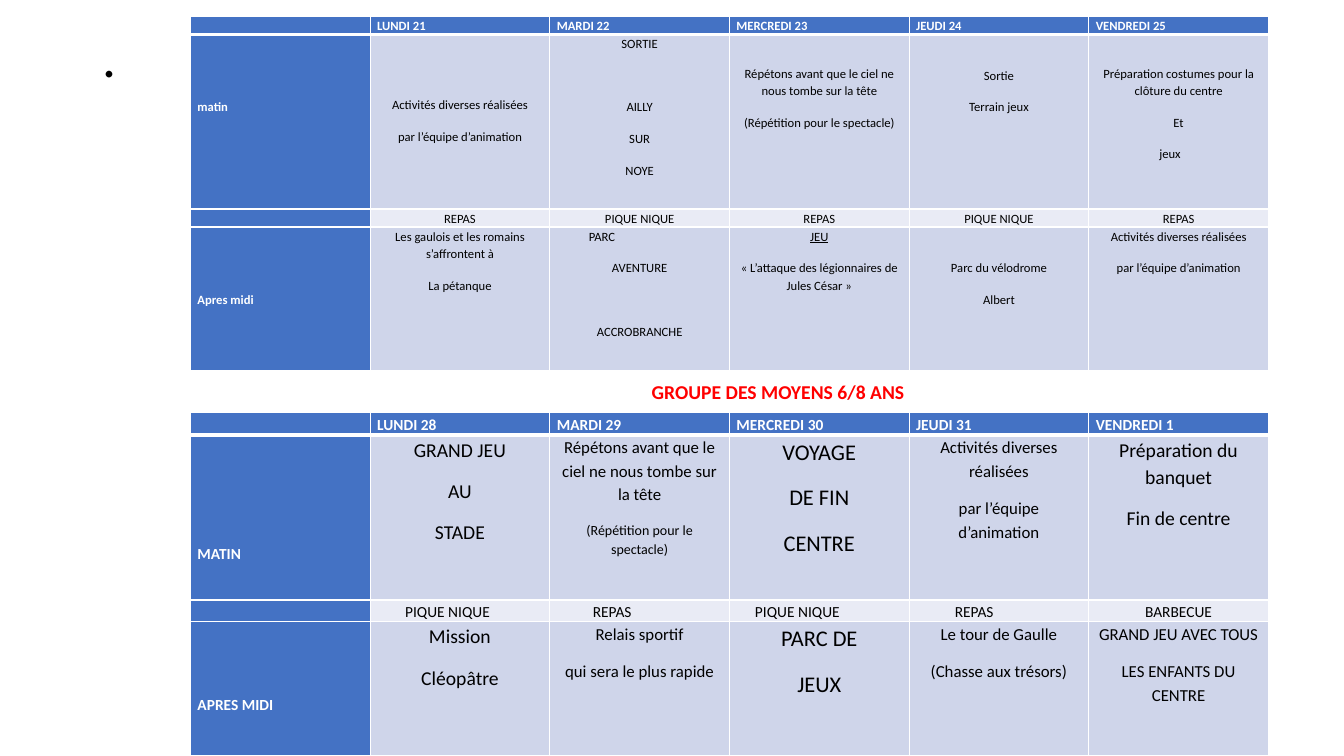
from dataclasses import dataclass

import pptx
import pptx.dml.color
import pptx.enum.text
import pptx.oxml
import pptx.oxml.ns
import pptx.util

FONT = "Calibri"
BLUE, LILAC, PALE = "4472C4", "CFD5EA", "E9EBF5"
WHITE, BLACK, RED = "FFFFFF", "000000", "FF0000"
LINE_SPACING, SPACE_AFTER = 1.15, 10
LEFT, COLUMN_WIDTH = 14.17, 13.37
CENTER = pptx.enum.text.PP_ALIGN.CENTER
MIDDLE = pptx.enum.text.MSO_ANCHOR.MIDDLE

deck = pptx.Presentation()
deck.slide_width = pptx.util.Inches(13.33)
deck.slide_height = pptx.util.Inches(7.5)


@dataclass(frozen=True)
class Line:
    """One paragraph; skip counts line steps left open above, indent is a percentage of the width."""
    text: str
    skip: float = 0
    indent: float = 0
    size: int = 0
    underline: bool = False


@dataclass(frozen=True)
class Entry:
    lines: tuple[Line, ...]
    size: int = 0


@dataclass(frozen=True)
class Week:
    top: float
    size: int
    row_heights: tuple[float, ...]
    rows: tuple[tuple[Entry, ...], ...]


def entry(*lines: str | Line, size: int = 0) -> Entry:
    return Entry(tuple(Line(line) if isinstance(line, str) else line for line in lines), size)


def entries(*texts: str) -> tuple[Entry, ...]:
    return tuple(entry(text) for text in texts)


def across(percent: float) -> int:
    return round(deck.slide_width * percent / 100)


def down(percent: float) -> int:
    return round(deck.slide_height * percent / 100)


def color(value: str) -> pptx.dml.color.RGBColor:
    return pptx.dml.color.RGBColor.from_string(value)


def line_step(size: int) -> float:
    """Height in points from one paragraph to the next."""
    return size * 1.22 * LINE_SPACING + SPACE_AFTER


def style(para, size: float, value: str, bold: bool = False) -> None:
    para.font.name, para.font.size, para.font.bold = FONT, pptx.util.Pt(size), bold
    para.font.color.rgb = color(value)


def border(cell, bottom: float) -> None:
    properties = cell._tc.get_or_add_tcPr()
    widths = {"lnL": 1, "lnR": 1, "lnT": 1, "lnB": bottom}
    for position, (side, width) in enumerate(widths.items()):
        properties.insert(position, pptx.oxml.parse_xml(
            f'<a:{side} {pptx.oxml.ns.nsdecls("a")} w="{pptx.util.Pt(width)}">'
            f'<a:solidFill><a:srgbClr val="{WHITE}"/></a:solidFill></a:{side}>'))


def fill_cell(cell, content: Entry, week_size: int, background: str, heading: bool) -> None:
    size = content.size or week_size
    cell.fill.solid()
    cell.fill.fore_color.rgb = color(background)
    cell.margin_left = cell.margin_right = pptx.util.Inches(0.07 if heading else 0.08)
    cell.margin_top = cell.margin_bottom = 0
    frame = cell.text_frame
    for number, line in enumerate(content.lines):
        para = frame.add_paragraph() if number else frame.paragraphs[0]
        gap = pptx.util.Pt(line.skip * line_step(size))
        if number:
            para.space_before = gap
        else:
            cell.margin_top = gap
        para.line_spacing, para.space_after = LINE_SPACING, pptx.util.Pt(SPACE_AFTER)
        style(para, line.size or size, WHITE if heading else BLACK, heading)
        if line.text:
            para.add_run().text = line.text
        else:
            para._p.get_or_add_endParaRPr().set("sz", str(size * 100))
        if line.underline:
            para.font.underline = True
        if line.indent:
            properties = para._p.get_or_add_pPr()
            properties.set("marL", str(across(line.indent)))
            properties.set("indent", "0")
        elif not heading:
            para.alignment = CENTER


def draw_week(page, week: Week) -> None:
    column_count = len(week.rows[0])
    table = page.shapes.add_table(
        len(week.rows), column_count, across(LEFT), down(week.top),
        across(COLUMN_WIDTH * column_count), down(sum(week.row_heights))).table
    table.first_row = table.horz_banding = False
    for column in table.columns:
        column.width = across(COLUMN_WIDTH)
    for row_number, (height, row) in enumerate(zip(week.row_heights, week.rows)):
        table.rows[row_number].height = down(height)
        for column_number, content in enumerate(row):
            heading = row_number == 0 or column_number == 0
            background = BLUE if heading else PALE if row_number == 2 else LILAC
            cell = table.cell(row_number, column_number)
            fill_cell(cell, content, week.size, background, heading)
            border(cell, 1 if row_number else 3)


def draw_label(page, text: str, box: tuple[float, float, float, float],
               size: float, value: str, bold: bool = False) -> None:
    left, top, width, height = box
    frame = page.shapes.add_textbox(across(left), down(top), across(width), down(height)).text_frame
    frame.word_wrap, frame.vertical_anchor = True, MIDDLE
    para = frame.paragraphs[0]
    para.text = text
    if bold:
        para.alignment = CENTER
    style(para, size, value, bold)


TEAM = ("Activités diverses réalisées", "par l’équipe d’animation")
REHEARSAL = "Répétons avant que le ciel ne nous tombe sur la tête"
SHOW = "(Répétition pour le spectacle)"

FIRST_WEEK = Week(2.13, 9, (2.42, 23.1, 2.38, 19.04), (
    entries("", "LUNDI 21", "MARDI 22", "MERCREDI 23", "JEUDI 24", "VENDREDI 25"),
    (entry(Line("matin", skip=2)),
     entry(Line(TEAM[0], skip=1.93), TEAM[1]),
     entry("SORTIE", Line("AILLY", skip=1), "SUR", "NOYE"),
     entry(Line(REHEARSAL, skip=0.93), SHOW),
     entry(Line("Sortie", skip=1), "Terrain jeux"),
     entry(Line("Préparation costumes pour la clôture du centre", skip=0.93),
           "Et", Line("jeux", indent=4.65))),
    entries("", "REPAS", "PIQUE NIQUE", "REPAS", "PIQUE NIQUE", "REPAS"),
    (entry(Line("Apres midi", skip=2)),
     entry("Les gaulois et les romains s’affrontent à", "La pétanque"),
     entry(Line("PARC", indent=2.3), "AVENTURE", Line("ACCROBRANCHE", skip=1)),
     entry(Line("JEU", underline=True), "« L’attaque des légionnaires de Jules César »"),
     entry(Line("Parc du vélodrome", skip=1), "Albert"),
     entry(*TEAM)),
))

SECOND_WEEK = Week(54.6, 11, (2.93, 21.83, 2.85, 17.79), (
    entries("", "LUNDI 28", "MARDI 29", "MERCREDI 30", "JEUDI 31", "VENDREDI 1"),
    (entry(Line("MATIN", skip=3)),
     entry("GRAND JEU", "AU", "STADE", size=14),
     entry(REHEARSAL, Line(SHOW, size=10), size=12),
     entry("VOYAGE", "DE FIN", "CENTRE", size=16),
     entry(*TEAM, size=12),
     entry("Préparation du banquet", "Fin de centre", size=14)),
    (entry(""),
     entry(Line("PIQUE NIQUE", indent=2)),
     entry(Line("REPAS", indent=2.6)),
     entry(Line("PIQUE NIQUE", indent=1.3)),
     entry(Line("REPAS", indent=2.8)),
     entry("BARBECUE")),
    (entry(Line("APRES MIDI", skip=2)),
     entry("Mission", "Cléopâtre", size=14),
     entry("Relais sportif", "qui sera le plus rapide", size=12),
     entry("PARC DE", "JEUX", size=16),
     entry("Le tour de Gaulle", "(Chasse aux trésors)", size=12),
     entry("GRAND JEU AVEC TOUS", "LES ENFANTS DU CENTRE", size=12)),
))


def main() -> None:
    page = deck.slides.add_slide(deck.slide_layouts[6])
    draw_label(page, ".", (6.9, 4.7, 2.1, 5.2), 39.6, BLACK)
    for week in (FIRST_WEEK, SECOND_WEEK):
        draw_week(page, week)
    draw_label(page, "GROUPE DES MOYENS 6/8 ANS", (35.9, 48.53, 44, 6.67), 14, RED, bold=True)
    deck.save("out.pptx")


if __name__ == "__main__":
    main()
